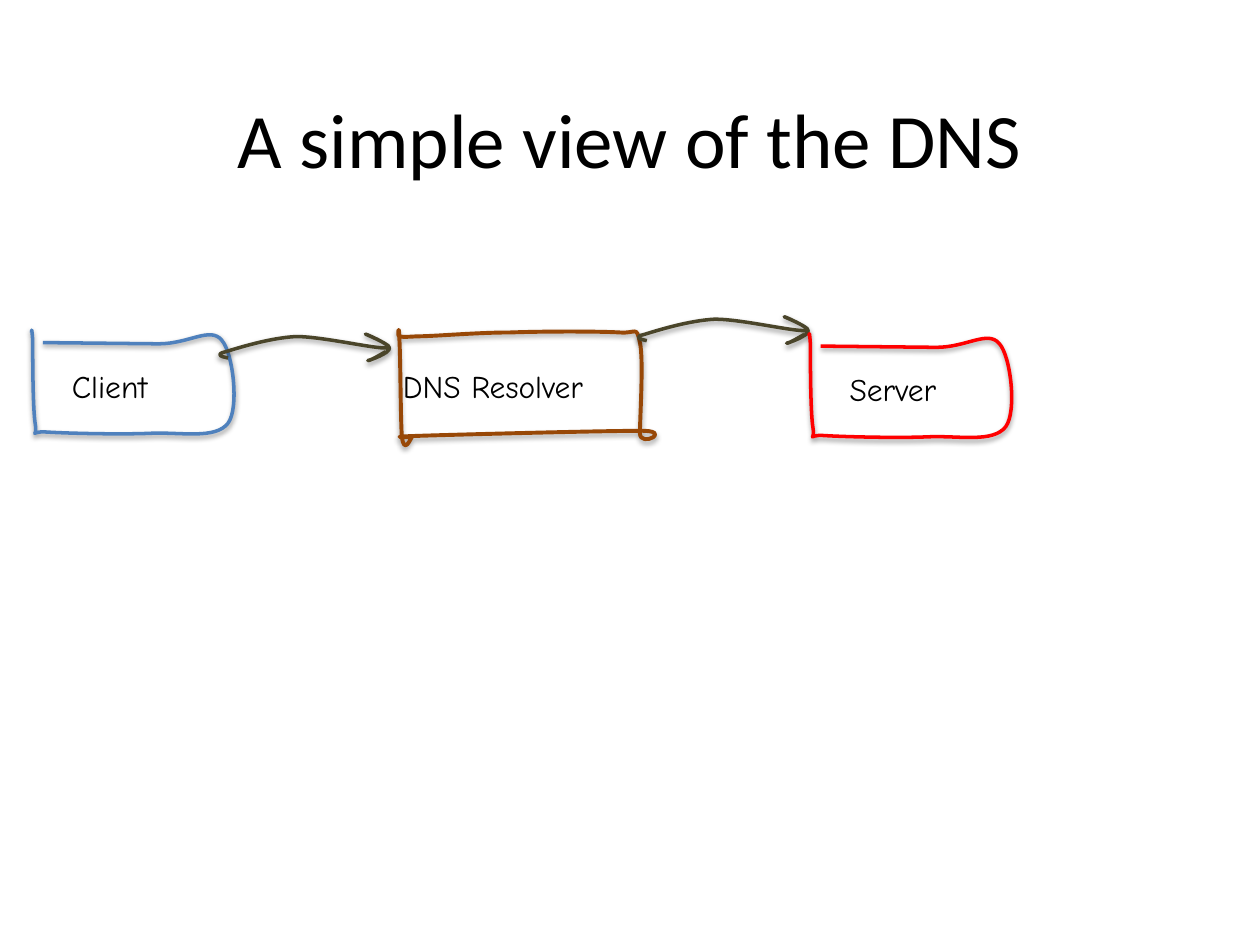
import lxml.etree
import pptx
import pptx.dml.color
import pptx.enum.text
import pptx.oxml.ns
import pptx.util

Pt = pptx.util.Pt
RGBColor = pptx.dml.color.RGBColor
qn = pptx.oxml.ns.qn

BLACK = RGBColor(0x00, 0x00, 0x00)
BLUE = RGBColor(0x4F, 0x81, 0xBD)
BROWN = RGBColor(0x98, 0x48, 0x07)
RED = RGBColor(0xFF, 0x00, 0x00)
OLIVE = RGBColor(0x4A, 0x45, 0x2A)

ENDPOINT_SIZE = (115.9, 59)
ENDPOINT = [
    (6.5, 7.2),
    (72.7, 7.9),
    (90, 7.9, 102.2, -2.2, 108.7, 5.8),
    (115.2, 13, 118.8, 44.6, 112.3, 53.3),
    (105.1, 62.6, 85.7, 58.3, 68.4, 59),
    (51.1, 59.8, 19.4, 59, 8.6, 58.3),
    (-2.2, 57.6, 3.6, 62.6, 2.2, 54),
    (0.7, 45.4, 0.7, 14.4, 0.7, 5.8),
    (0, -3.6, 0, 1.4, 0, 1.4),
]
RESOLVER_SIZE = (146.9, 65.5)
RESOLVER = [
    (10.8, 3.6),
    (20.9, 3.6, 44.6, 1.4, 64.1, 1.4),
    (83.5, 0.7, 114.5, 0.7, 126.7, 1.4),
    (136.1, 2.2, 136.1, -2.9, 138.2, 7.2),
    (140.4, 16.6, 138.2, 50.4, 138.2, 59),
    (138.2, 67.7, 158.4, 56.9, 137.5, 57.6),
    (115.9, 57.6, 32.4, 59.8, 10.8, 60.5),
    (-10.8, 61.2, 9.4, 61.2, 7.9, 61.2),
    (7.2, 61.9, 3.6, 71.3, 2.2, 61.2),
    (1.4, 51.8, 1.4, 14.4, 0.7, 4.3),
    (0.7, -5, -0.7, 3.6, 0.7, 3.6),
    (2.9, 3.6, 0, 4.3, 10.8, 3.6),
]
ARROW_SIZE = (97.2, 15.1)
ARROW = [
    (4.3, 13.7),
    (0.7, 13, -3.6, 11.5, 2.9, 10.1),
    (10.1, 7.9, 28.1, 2.2, 43.2, 1.4),
    (58.3, 1.4, 88.6, 8.6, 95, 7.9),
    (101.5, 7.9, 82.8, 0, 82.8, 0),
    (83.5, 0, 96.5, 5.8, 96.5, 7.9),
    (97.2, 10.8, 85, 15.1, 84.2, 15.1),
    (84.2, 15.8, 89.3, 13, 94.3, 10.1),
]


def add_element(parent, tag, **attributes):
    element = lxml.etree.SubElement(parent, qn(tag))
    for name, value in attributes.items():
        element.set(name, str(value))
    return element


def draw_outline(sp, outline, close):
    path = next(sp._element.iter(qn("a:path")))
    for child in list(path):
        path.remove(child)
    for i, segment in enumerate(outline):
        tag = "a:cubicBezTo" if len(segment) == 6 else "a:lnTo" if i else "a:moveTo"
        command = add_element(path, tag)
        for x, y in zip(segment[::2], segment[1::2]):
            add_element(command, "a:pt", x=Pt(x), y=Pt(y))
    if close:
        add_element(path, "a:close")


def add_shadow(sp, opacity, distance):
    sp.shadow.inherit = False
    effects = sp._element.spPr.find(qn("a:effectLst"))
    shadow = add_element(effects, "a:outerShdw", blurRad=Pt(3.1), dist=Pt(distance),
                         dir=5400000, rotWithShape=0)
    color = add_element(shadow, "a:srgbClr", val=BLACK)
    add_element(color, "a:alpha", val=opacity * 1000)


def add_sketch(s, left, top, size, outline, color, width=2, opacity=38, distance=1.6,
               close=False):
    right, bottom = left + size[0], top + size[1]
    builder = s.shapes.build_freeform(Pt(left), Pt(top))
    builder.add_line_segments([(Pt(right), Pt(bottom))], close=False)
    sp = builder.convert_to_shape()
    draw_outline(sp, outline, close)
    sp.fill.background()
    sp.line.color.rgb = color
    sp.line.width = Pt(width)
    add_shadow(sp, opacity, distance)


def add_label(s, left, top, width, text):
    tf = s.shapes.add_textbox(Pt(left), Pt(top), Pt(width), Pt(29)).text_frame
    tf.word_wrap = False
    tf.auto_size = pptx.enum.text.MSO_AUTO_SIZE.SHAPE_TO_FIT_TEXT
    p = tf.paragraphs[0]
    p.text = text
    p.font.size = Pt(18)
    p.font.name = "Comic Neue"
    p.font.color.rgb = BLACK


def add_endpoint(s, left, top, text, width, color):
    add_sketch(s, left, top, ENDPOINT_SIZE, ENDPOINT, color)
    add_label(s, left + 16, top + 17.5, width, text)


def add_resolver(s, left, top):
    add_sketch(s, left, top, RESOLVER_SIZE, RESOLVER, BROWN, 2.25, 35, 1.8, True)
    add_label(s, left - 4.3, top + 17.5, 149, "DNS Resolver")


def add_title(s, left, top, width, height):
    sp = s.shapes.title
    sp.left, sp.top, sp.width, sp.height = Pt(left), Pt(top), Pt(width), Pt(height)
    tf = sp.text_frame
    tf.vertical_anchor = pptx.enum.text.MSO_ANCHOR.MIDDLE
    p = tf.paragraphs[0]
    p.text = "A simple view of the DNS"
    p.alignment = pptx.enum.text.PP_ALIGN.CENTER
    p.font.size = Pt(44)
    p.font.name = "Calibri"
    p.font.color.rgb = BLACK


def main():
    prs = pptx.Presentation()
    prs.slide_width, prs.slide_height = Pt(720), Pt(540)
    s = prs.slides.add_slide(prs.slide_layouts[5])
    add_title(s, 36, 33.8, 648, 90)
    add_endpoint(s, 18, 188.6, "Client", 73.4, BLUE)
    add_resolver(s, 227.5, 188.6)
    for left, top in ((126, 190.9), (365.3, 181)):
        add_sketch(s, left, top, ARROW_SIZE, ARROW, OLIVE)
    add_endpoint(s, 462.4, 190.6, "Server", 77.8, RED)
    prs.save("out.pptx")


if __name__ == "__main__":
    main()
